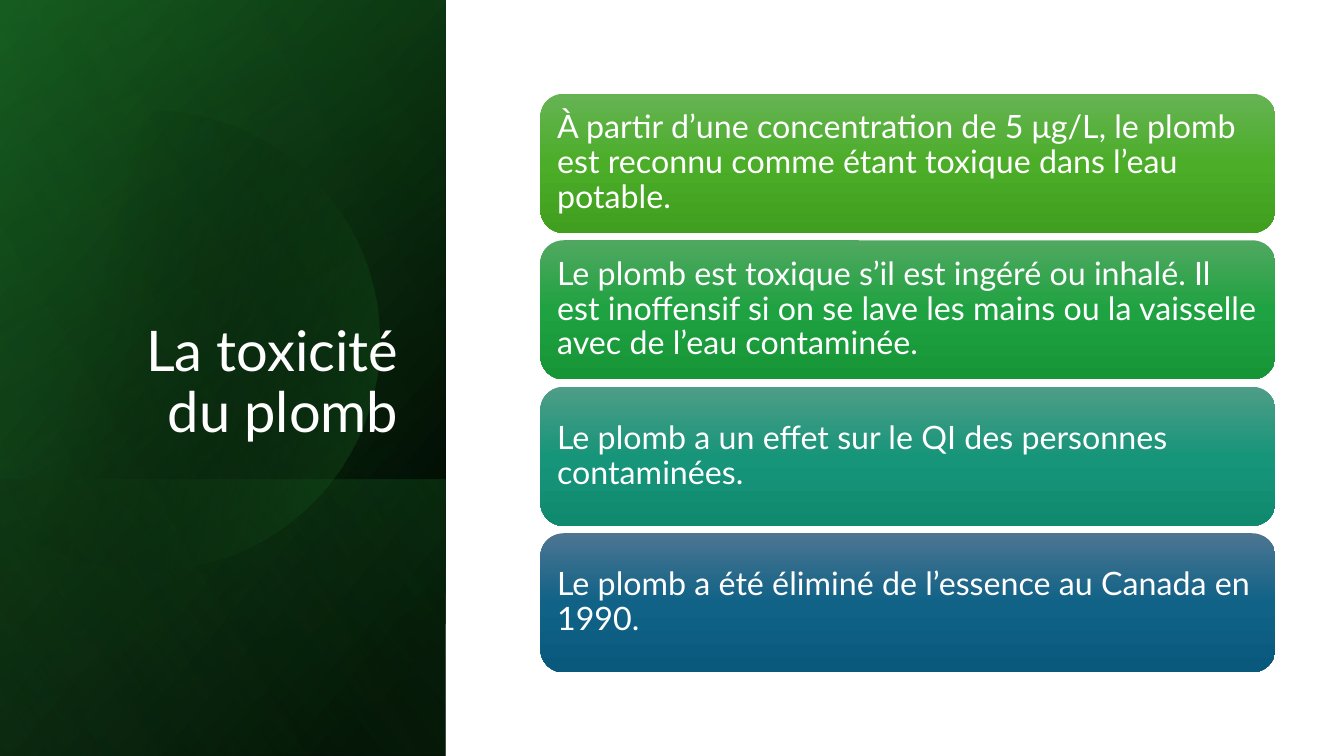
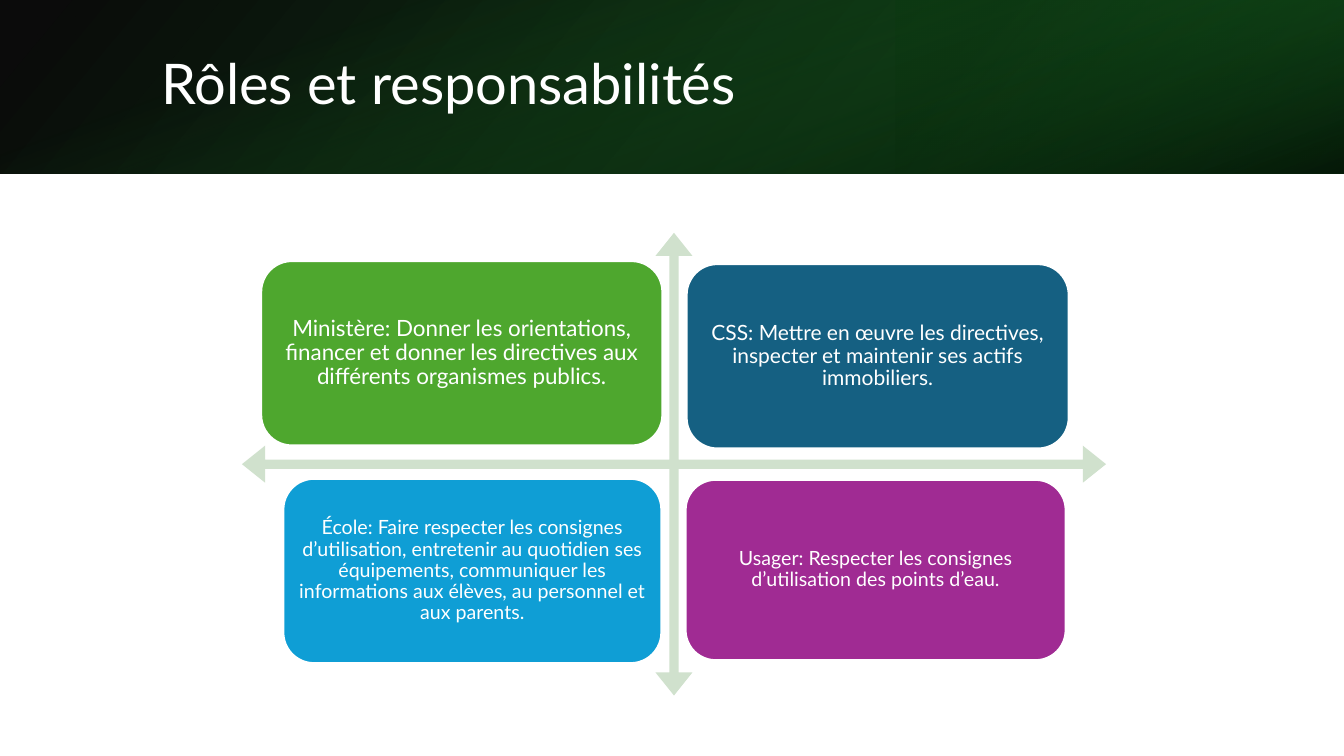
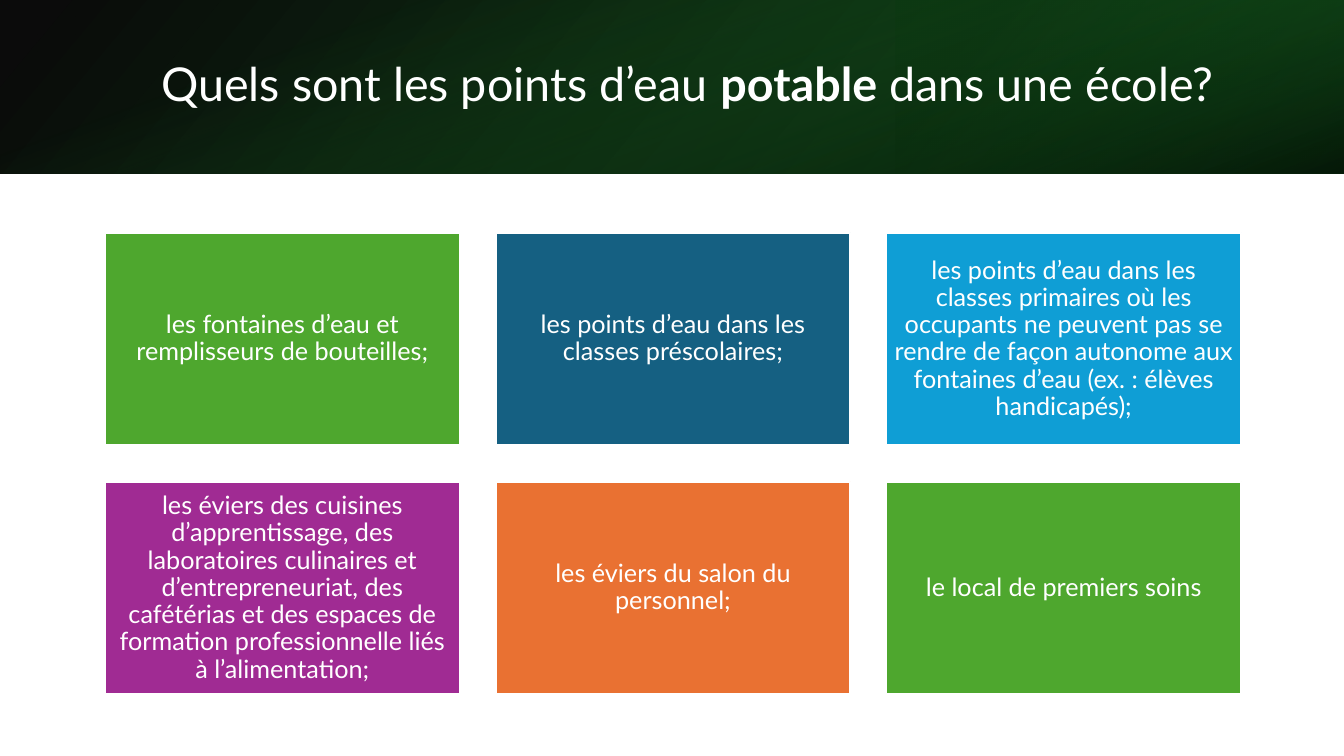
import math

import pptx
import pptx.dml.color
import pptx.enum.shapes
import pptx.enum.text
import pptx.oxml.ns
import pptx.util
from lxml import etree

Inches = pptx.util.Inches
Pt = pptx.util.Pt
qn = pptx.oxml.ns.qn
SHAPE = pptx.enum.shapes.MSO_SHAPE
ALIGN = pptx.enum.text.PP_ALIGN
ANCHOR = pptx.enum.text.MSO_ANCHOR

FONT = "Lato"
WHITE, BLACK = "FFFFFF", "000000"
DARK_GREEN, FOREST = "13501B", "196B24"
GREEN, BLUE, SKY, PURPLE, ORANGE = "4EA72E", "156082", "0F9ED5", "A02B93", "E97132"
PALE_GREEN = "D0E1CD"
SLIDE_W, SLIDE_H = 13.33, 7.5
SIDE_W, BAND_H = 4.42, 1.72


def rgb(color):
    return pptx.dml.color.RGBColor.from_string(color)


def fill_gradient(sp, stops, angle):
    """Stops are (position %, colour[, opacity %]); the angle runs clockwise."""
    sp.fill.background()
    grad = etree.Element(qn("a:gradFill"), rotWithShape="1")
    gs_list = etree.SubElement(grad, qn("a:gsLst"))
    for pos, color, *opacity in stops:
        gs = etree.SubElement(gs_list, qn("a:gs"), pos=str(pos * 1000))
        clr = etree.SubElement(gs, qn("a:srgbClr"), val=color)
        if opacity:
            etree.SubElement(clr, qn("a:alpha"), val=str(opacity[0] * 1000))
    etree.SubElement(grad, qn("a:lin"), ang=str(angle * 60000), scaled="0")
    sp_pr = sp._element.spPr
    sp_pr.replace(sp_pr.find(qn("a:noFill")), grad)


def add_plain(slide, shape, box):
    sp = slide.shapes.add_shape(shape, *map(Inches, box))
    sp.shadow.inherit = False
    sp.line.fill.background()
    return sp


def add_panel(slide, box, stops, angle, rotation=0, flip=True):
    """Gradient rectangle that covers box once it has been rotated."""
    x, y, w, h = box
    if rotation == 90:
        x, y, w, h = x + (w - h) / 2, y + (h - w) / 2, h, w
    sp = add_plain(slide, SHAPE.RECTANGLE, (x, y, w, h))
    sp.rotation = rotation
    if flip:
        sp._element.spPr.xfrm.set("flipH", "1")
    fill_gradient(sp, stops, angle)


def style_paragraph(p, size, align):
    p.alignment = align
    p.line_spacing = 0.9
    p.font.name = FONT
    p.font.size = Pt(size)
    p.font.color.rgb = rgb(WHITE)


def place_title(slide, box, runs, size=40, align=ALIGN.LEFT, anchor=ANCHOR.MIDDLE):
    """Runs are (text, bold) pairs; the title goes in front of what is drawn so far."""
    sp = slide.shapes.title
    sp.left, sp.top, sp.width, sp.height = map(Inches, box)
    slide.shapes._spTree.append(sp._element)
    tf = sp.text_frame
    tf.word_wrap = True
    tf.auto_size = pptx.enum.text.MSO_AUTO_SIZE.NONE
    tf.vertical_anchor = anchor
    p = tf.paragraphs[0]
    style_paragraph(p, size, align)
    for text, bold in runs:
        r = p.add_run()
        r.text = text
        if bold:
            r.font.bold = True


def add_card(slide, shape, box, text, size, align=ALIGN.CENTER, margin=0.07, color=None):
    sp = add_plain(slide, shape, box)
    if color:
        sp.fill.solid()
        sp.fill.fore_color.rgb = rgb(color)
        sp.line.color.rgb = rgb(WHITE)
        sp.line.width = Pt(1.5)
    tf = sp.text_frame
    tf.word_wrap = True
    tf.vertical_anchor = ANCHOR.MIDDLE
    tf.margin_left = tf.margin_right = tf.margin_top = tf.margin_bottom = Inches(margin)
    p = tf.paragraphs[0]
    p.text = text
    style_paragraph(p, size, align)
    return sp


def grid(box, cols, rows, w, h):
    """Cells of size w by h, spread evenly over box, row by row."""
    x, y, width, height = box
    step_x = (width - w) / max(cols - 1, 1)
    step_y = (height - h) / max(rows - 1, 1)
    return [(x + c * step_x, y + r * step_y, w, h)
            for r in range(rows) for c in range(cols)]


def add_disc(slide, cx, cy, radius):
    """Faint disc cut off by the left edge of the slide."""
    cut = math.acos(-cx / radius)
    angles = [cut * (i / 60 - 1) for i in range(121)]
    points = [(Inches(cx + radius * math.cos(a)), Inches(cy + radius * math.sin(a)))
              for a in angles]
    builder = slide.shapes.build_freeform(*points[0])
    builder.add_line_segments(points[1:], close=True)
    sp = builder.convert_to_shape()
    sp.shadow.inherit = False
    sp.line.fill.background()
    fill_gradient(sp, [(29, BLACK, 0), (100, FOREST, 43)], 14)


def add_side_panel(slide):
    side = (0, 0, SIDE_W, SLIDE_H)
    foot = (0, 4.76, SIDE_W, 2.74)
    add_panel(slide, side, [(8, BLACK), (100, DARK_GREEN)], 50, 90)
    add_panel(slide, side, [(0, BLACK, 0), (99, FOREST, 46)], 30, 90)
    add_panel(slide, foot, [(2, FOREST, 29), (100, BLACK, 30)], 130, 90)
    add_disc(slide, 1.48, 3.38, 2.28)
    add_panel(slide, side, [(0, BLACK, 0), (99, "47D45A", 11)], 120, 90)


def add_band(slide, runs, size=40):
    band = (0, 0, SLIDE_W, BAND_H)
    end = (SLIDE_W * 2 / 3, 0, SLIDE_W / 3, BAND_H)
    add_panel(slide, band, [(0, BLACK, 96), (100, DARK_GREEN)], 140)
    add_panel(slide, end, [(19, "0D3612", 68), (100, FOREST, 79)], 320, 180)
    add_panel(slide, band, [(23, FOREST, 0), (99, BLACK, 74)], 340, 90, flip=False)
    place_title(slide, (1.5, 0.38, 10.98, 0.96), runs, size)


def add_fact_list(slide, box):
    facts = [
        ("À partir d’une concentration de 5 μg/L, le plomb est reconnu comme étant "
         "toxique dans l’eau potable.", ("66B354", "4BAD28", "409F1E")),
        ("Le plomb est toxique s’il est ingéré ou inhalé. Il est inoffensif si on se "
         "lave les mains ou la vaisselle avec de l’eau contaminée.",
         ("50A860", "1FA241", "169537")),
        ("Le plomb a un effet sur le QI des personnes contaminées.",
         ("4E9D87", "17957A", "0F8A6F")),
        ("Le plomb a été éliminé de l’essence au Canada en 1990.",
         ("4C7591", "106287", "09597D")),
    ]
    cells = grid(box, 1, len(facts), box[2], 1.38)
    for cell, (text, colors) in zip(cells, facts):
        sp = add_card(slide, SHAPE.ROUNDED_RECTANGLE, cell, text, 23, ALIGN.LEFT, 0.1)
        fill_gradient(sp, list(zip((0, 50, 100), colors)), 90)


def add_role_matrix(slide, box):
    x, y = box[:2]
    arrows = add_plain(slide, SHAPE.QUAD_ARROW, box)
    for i, value in enumerate((0.02, 0.04, 0.05)):
        arrows.adjustments[i] = value
    arrows.fill.solid()
    arrows.fill.fore_color.rgb = rgb(PALE_GREEN)
    roles = [
        ((0.19, 0.28, 3.98, 1.83), GREEN, 16, 0.07,
         "Ministère: Donner les orientations, financer et donner les directives aux "
         "différents organismes publics."),
        ((4.41, 0.31, 3.79, 1.83), BLUE, 15, 0.06,
         "CSS: Mettre en œuvre les directives, inspecter et maintenir ses actifs "
         "immobiliers."),
        ((0.41, 2.44, 3.75, 1.83), SKY, 14, 0.06,
         "École: Faire respecter les consignes d’utilisation, entretenir au quotidien "
         "ses équipements, communiquer les informations aux élèves, au personnel et "
         "aux parents."),
        ((4.4, 2.45, 3.77, 1.79), PURPLE, 14, 0.06,
         "Usager: Respecter les consignes d’utilisation des points d’eau."),
    ]
    for (dx, dy, w, h), color, size, margin, text in roles:
        add_card(slide, SHAPE.ROUNDED_RECTANGLE, (x + dx, y + dy, w, h), text, size,
                 margin=margin, color=color)


def add_water_points(slide, box):
    points = [
        ("les fontaines d’eau et remplisseurs de bouteilles;", GREEN),
        ("les points d’eau dans les classes préscolaires;", BLUE),
        ("les points d’eau dans les classes primaires où les occupants ne peuvent pas "
         "se rendre de façon autonome aux fontaines d’eau (ex. : élèves handicapés);", SKY),
        ("les éviers des cuisines d’apprentissage, des laboratoires culinaires et "
         "d’entrepreneuriat, des cafétérias et des espaces de formation "
         "professionnelle liés à l’alimentation;", PURPLE),
        ("les éviers du salon du personnel;", ORANGE),
        ("le local de premiers soins", GREEN),
    ]
    for cell, (text, color) in zip(grid(box, 3, 2, 3.52, 2.11), points):
        add_card(slide, SHAPE.RECTANGLE, cell, text, 18, color=color)


def main():
    prs = pptx.Presentation()
    prs.slide_width, prs.slide_height = Inches(SLIDE_W), Inches(SLIDE_H)
    title_only = prs.slide_layouts[5]

    toxicity = prs.slides.add_slide(title_only)
    add_side_panel(toxicity)
    place_title(toxicity, (0.64, 1.84, 3.41, 2.62), [("La toxicité du plomb", False)],
                align=ALIGN.RIGHT, anchor=ANCHOR.BOTTOM)
    add_fact_list(toxicity, (5.36, 0.93, 7.29, 5.74))

    roles = prs.slides.add_slide(title_only)
    add_band(roles, [("Rôles et responsabilités", False)])
    add_role_matrix(roles, (2.4, 2.31, 8.57, 4.59))

    water = prs.slides.add_slide(title_only)
    add_band(water, [("Quels sont les points d’eau ", False), ("potable", True),
                     (" dans une école?", False)], 33.3)
    add_water_points(water, (1.04, 2.31, 11.27, 4.58))

    prs.save("out.pptx")


if __name__ == "__main__":
    main()
